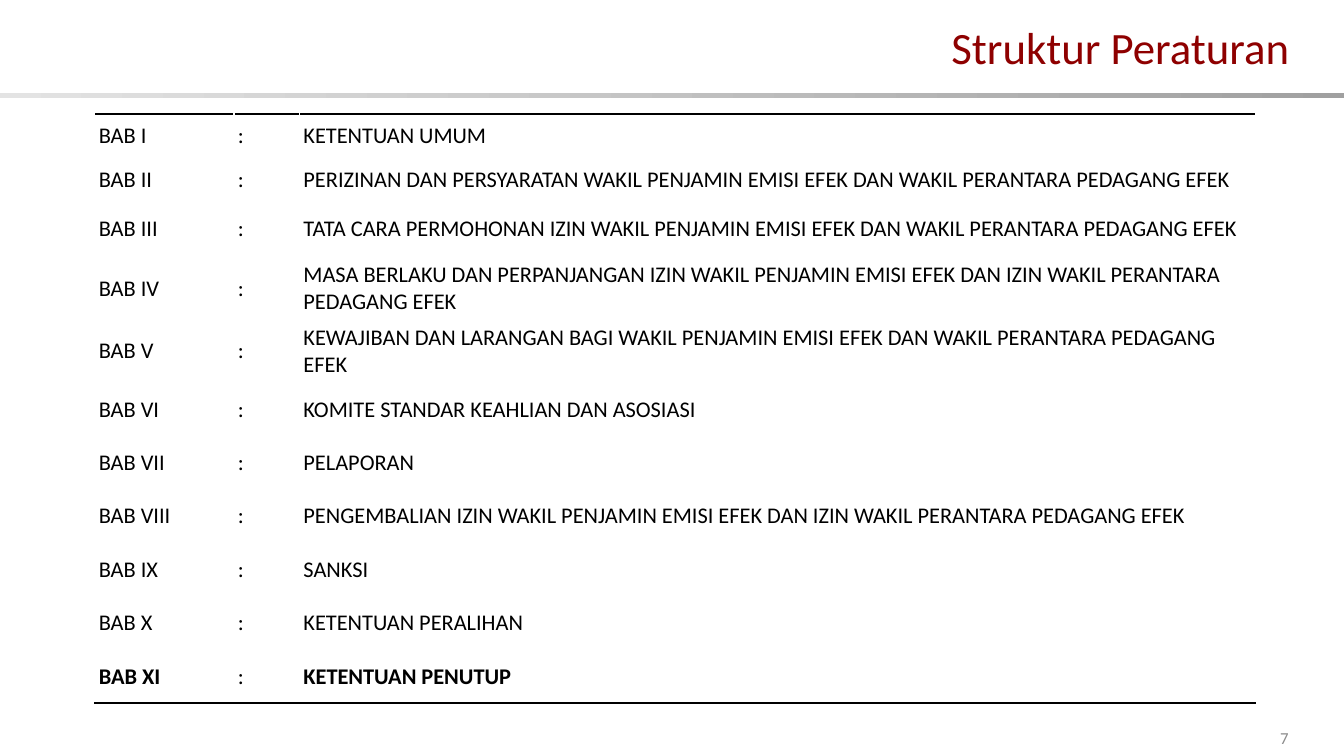
from lxml import etree
from pptx import Presentation
from pptx import util as u
from pptx.dml.color import RGBColor
from pptx.enum import shapes, text
from pptx.oxml import ns

CHAPTERS = [
    ("I", "KETENTUAN UMUM", 0.44),
    ("II", "PERIZINAN DAN PERSYARATAN WAKIL PENJAMIN EMISI EFEK DAN WAKIL PERANTARA PEDAGANG EFEK", 0.43),
    ("III", "TATA CARA PERMOHONAN IZIN WAKIL PENJAMIN EMISI EFEK DAN WAKIL PERANTARA PEDAGANG EFEK", 0.55),
    ("IV", "MASA BERLAKU DAN PERPANJANGAN IZIN WAKIL PENJAMIN EMISI EFEK DAN IZIN WAKIL PERANTARA PEDAGANG EFEK", 0.53),
    ("V", "KEWAJIBAN DAN LARANGAN BAGI WAKIL PENJAMIN EMISI EFEK DAN WAKIL PERANTARA PEDAGANG EFEK", 0.51),
    ("VI", "KOMITE STANDAR KEAHLIAN DAN ASOSIASI", 0.53),
    ("VII", "PELAPORAN", 0.53),
    ("VIII", "PENGEMBALIAN IZIN WAKIL PENJAMIN EMISI EFEK DAN IZIN WAKIL PERANTARA PEDAGANG EFEK", 0.53),
    ("IX", "SANKSI", 0.53),
    ("X", "KETENTUAN PERALIHAN", 0.53),
    ("XI", "KETENTUAN PENUTUP", 0.53),
]
COLUMN_WIDTHS = [1.38, 0.65, 9.48]


def color(value):
    return RGBColor.from_string(value)


def write(frame, words, size, ink, align, bold=False):
    """Fill a text frame with one formatted paragraph."""
    frame.text = words
    frame.word_wrap = True
    paragraph = frame.paragraphs[0]
    paragraph.alignment = align
    formats = {"name": "Calibri", "size": u.Pt(size), "bold": bold}
    for name, value in formats.items():
        setattr(paragraph.font, name, value)
    paragraph.font.color.rgb = color(ink)


presentation = Presentation()
presentation.slide_width = u.Inches(13.33)
presentation.slide_height = u.Inches(7.5)
slide = presentation.slides.add_slide(presentation.slide_layouts[5])

# Title and the bar under it
title = slide.shapes.title
title.left, title.top, title.width, title.height = map(u.Inches, (2.02, 0.17, 10.87, 0.59))
title.text_frame.auto_size = text.MSO_AUTO_SIZE.NONE
title.text_frame.vertical_anchor = text.MSO_ANCHOR.MIDDLE
write(title.text_frame, "Struktur Peraturan", 32, "8E0000", text.PP_ALIGN.RIGHT)

bar = slide.shapes.add_shape(shapes.MSO_SHAPE.RECTANGLE, 0, u.Inches(0.92),
                             presentation.slide_width, u.Inches(0.05))
bar.fill.gradient()
bar.fill.gradient_angle = 0
for stop, shade in zip(bar.fill.gradient_stops, ("E3E3E3", "A0A0A0")):
    stop.color.rgb = color(shade)

# Page number
page = slide.shapes.add_shape(shapes.MSO_SHAPE.RECTANGLE,
                              *map(u.Inches, (12.46, 7.14, 0.56, 0.36)))
page.fill.solid()
page.fill.fore_color.rgb = color("FFFFFF")
page.text_frame.vertical_anchor = text.MSO_ANCHOR.MIDDLE
write(page.text_frame, "7", 12, "8C8C8C", text.PP_ALIGN.CENTER)

for shape in (bar, page):
    shape.shadow.inherit = False
    shape.line.fill.background()

# Chapter table, ruled above the first row and below the last
frame = slide.shapes.add_table(len(CHAPTERS), len(COLUMN_WIDTHS),
                               *map(u.Inches, (0.94, 1.13, sum(COLUMN_WIDTHS), 5.64)))
table = frame.table
table.first_row = table.horz_banding = False
for column, width in zip(table.columns, COLUMN_WIDTHS):
    column.width = u.Inches(width)

last = len(CHAPTERS) - 1
rules = {0: "a:lnT", last: "a:lnB"}
for index, (number, heading, height) in enumerate(CHAPTERS):
    table.rows[index].height = u.Inches(height)
    for cell, words in zip(table.rows[index].cells, (f"BAB {number}", ":", heading)):
        for side in ("left", "right", "top", "bottom"):
            setattr(cell, f"margin_{side}", u.Inches(0.04))
        cell.vertical_anchor = text.MSO_ANCHOR.MIDDLE
        cell.fill.solid()
        cell.fill.fore_color.rgb = color("FFFFFF")
        write(cell.text_frame, words, 16, "000000", text.PP_ALIGN.LEFT,
              bold=index == last and words != ":")
        if index in rules:
            rule = etree.Element(ns.qn(rules[index]), w=str(u.Pt(2)))
            fill = etree.SubElement(rule, ns.qn("a:solidFill"))
            etree.SubElement(fill, ns.qn("a:srgbClr"), val="000000")
            cell._tc.get_or_add_tcPr().insert(0, rule)

presentation.save("out.pptx")
